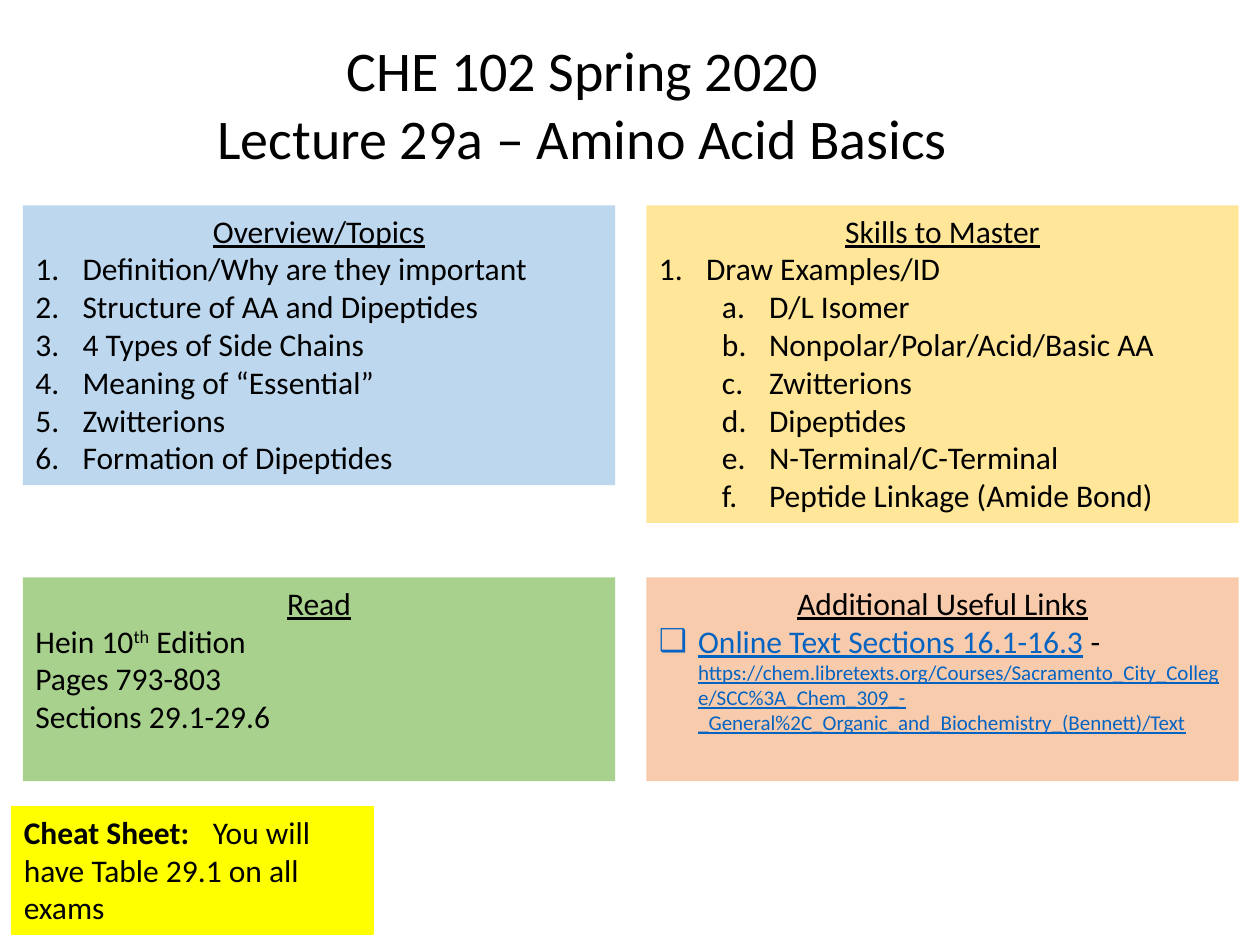
from dataclasses import dataclass
from typing import NamedTuple

from lxml.etree import SubElement
from pptx import Presentation
from pptx.dml.color import RGBColor
from pptx.enum.shapes import MSO_SHAPE
from pptx.enum.text import MSO_ANCHOR, MSO_AUTO_SIZE, PP_ALIGN
from pptx.oxml.ns import qn
from pptx.util import Cm, Pt


@dataclass(frozen=True)
class Theme:
    font: str = "Calibri"
    text: str = "000000"
    link: str = "0563C1"
    blue: str = "BDD7EE"
    gold: str = "FFE699"
    green: str = "A9D18E"
    peach: str = "F8CBAD"
    yellow: str = "FFFF00"
    title_size: int = 32
    body_size: int = 18
    address_size: int = 12


THEME = Theme()


class Box(NamedTuple):
    left: float
    top: float
    width: float
    height: float


class Run(NamedTuple):
    text: str
    size: int = THEME.body_size
    color: str = THEME.text
    bold: bool = False
    underline: bool = False
    baseline: int = 0


class ListStyle(NamedTuple):
    margin: float = 0
    hanging: float = 0
    level: int = 0
    tag: str = "a:buNone"
    attribute: str = ""
    value: str = ""


PLAIN = ListStyle()
NUMBERED = ListStyle(0.95, 0.95, 0, "a:buAutoNum", "type", "arabicPeriod")
LETTERED = ListStyle(2.22, 0.95, 1, "a:buAutoNum", "type", "alphaLcPeriod")
CHECKBOX = ListStyle(0.79, 0.79, 0, "a:buChar", "char", "❑")


class Line(NamedTuple):
    runs: list[Run]
    style: ListStyle = PLAIN


class Panel(NamedTuple):
    heading: str
    box: Box
    fill: str
    lines: list[Line]


def list_lines(items: list[str], style: ListStyle = PLAIN) -> list[Line]:
    return [Line([Run(item)], style) for item in items]


LEFT, RIGHT, UPPER, LOWER, WIDTH = 0.46, 13.03, 4.14, 11.64, 11.94

TITLE = ["CHE 102 Spring 2020", "Lecture 29a – Amino Acid Basics"]
PANELS = [
    Panel("Overview/Topics", Box(LEFT, UPPER, WIDTH, 5.64), THEME.blue, list_lines([
        "Definition/Why are they important",
        "Structure of AA and Dipeptides",
        "4 Types of Side Chains",
        "Meaning of “Essential”",
        "Zwitterions",
        "Formation of Dipeptides",
    ], NUMBERED)),
    Panel("Skills to Master", Box(RIGHT, UPPER, WIDTH, 6.4), THEME.gold,
          list_lines(["Draw Examples/ID"], NUMBERED) + list_lines([
              "D/L Isomer",
              "Nonpolar/Polar/Acid/Basic AA",
              "Zwitterions",
              "Dipeptides",
              "N-Terminal/C-Terminal",
              "Peptide Linkage (Amide Bond)",
          ], LETTERED)),
    Panel("Read", Box(LEFT, LOWER, WIDTH, 4.11), THEME.green, [
        Line([Run("Hein 10"), Run("th", baseline=30000), Run(" Edition")]),
        *list_lines(["Pages 793-803", "Sections 29.1-29.6"]),
    ]),
    Panel("Additional Useful Links", Box(RIGHT, LOWER, WIDTH, 4.11), THEME.peach, [
        Line([
            Run("Online Text Sections 16.1-16.3", color=THEME.link, underline=True),
            Run(" - "),
            Run("https://chem.libretexts.org/Courses/Sacramento_City_College/"
                "SCC%3A_Chem_309_-_General%2C_Organic_and_Biochemistry_(Bennett)/Text",
                size=THEME.address_size, color=THEME.link, underline=True),
        ], CHECKBOX),
    ]),
]


def place(shape, box: Box) -> None:
    shape.left, shape.top, shape.width, shape.height = map(Cm, box)


def paint(shape, color: str) -> None:
    shape.fill.solid()
    shape.fill.fore_color.rgb = RGBColor.from_string(color)


def prepare_frame(shape, anchor=MSO_ANCHOR.TOP, wrap: bool = True):
    frame = shape.text_frame
    frame.auto_size = MSO_AUTO_SIZE.NONE
    frame.word_wrap = wrap
    frame.vertical_anchor = anchor
    return frame


def format_paragraph(paragraph, style: ListStyle, alignment) -> None:
    paragraph.level = style.level
    paragraph.alignment = alignment
    paragraph.space_before = Pt(0)
    properties = paragraph._p.get_or_add_pPr()
    properties.set("marL", str(Cm(style.margin)))
    properties.set("indent", str(-Cm(style.hanging)))
    bullet = SubElement(properties, qn(style.tag))
    if style.attribute:
        bullet.set(style.attribute, style.value)


def add_run(paragraph, text: str, *, size: int, color: str, bold: bool,
            underline: bool, baseline: int) -> None:
    run = paragraph.add_run()
    run.text = text
    font = run.font
    font.name, font.size = THEME.font, Pt(size)
    font.bold, font.underline = bold, underline
    font.color.rgb = RGBColor.from_string(color)
    if baseline:
        run._r.get_or_add_rPr().set("baseline", str(baseline))


def add_line(frame, line: Line, alignment=PP_ALIGN.LEFT):
    first = frame.paragraphs[0]
    paragraph = frame.add_paragraph() if first.runs else first
    format_paragraph(paragraph, line.style, alignment)
    for run in line.runs:
        add_run(paragraph, **run._asdict())
    return paragraph


def draw_title(shape) -> None:
    place(shape, Box(4.06, 0.58, 15.37, 3))
    frame = prepare_frame(shape, MSO_ANCHOR.MIDDLE, wrap=False)
    for text in TITLE:
        add_line(frame, Line([Run(text, THEME.title_size)]), PP_ALIGN.CENTER)


def draw_panel(shape, panel: Panel) -> None:
    place(shape, panel.box)
    paint(shape, panel.fill)
    frame = prepare_frame(shape)
    add_line(frame, Line([Run(panel.heading, underline=True)]), PP_ALIGN.CENTER)
    for line in panel.lines:
        add_line(frame, line)


def draw_cheat_sheet(slide) -> None:
    shape = slide.shapes.add_shape(
        MSO_SHAPE.RECTANGLE, *map(Cm, Box(0.23, 16.26, 7.29, 2.57)))
    shape.shadow.inherit = False
    paint(shape, THEME.yellow)
    shape.line.color.rgb = RGBColor.from_string(THEME.yellow)
    shape.line.width = Pt(0.75)
    paragraph = add_line(prepare_frame(shape), Line([
        Run("Cheat Sheet:", bold=True),
        Run("\tYou will have Table 29.1 on all exams"),
    ]))
    tabs = SubElement(paragraph._p.get_or_add_pPr(), qn("a:tabLst"))
    SubElement(tabs, qn("a:tab"), pos=str(Cm(3.76)), algn="l")


def main() -> None:
    presentation = Presentation()
    presentation.slide_width, presentation.slide_height = Cm(25.4), Cm(19.05)
    comparison = presentation.slide_layouts.get_by_name("Comparison")
    slide = presentation.slides.add_slide(comparison)
    title, *bodies = slide.placeholders
    draw_title(title)
    for body, panel in zip(bodies, PANELS):
        draw_panel(body, panel)
    draw_cheat_sheet(slide)
    presentation.save("out.pptx")


if __name__ == "__main__":
    main()
